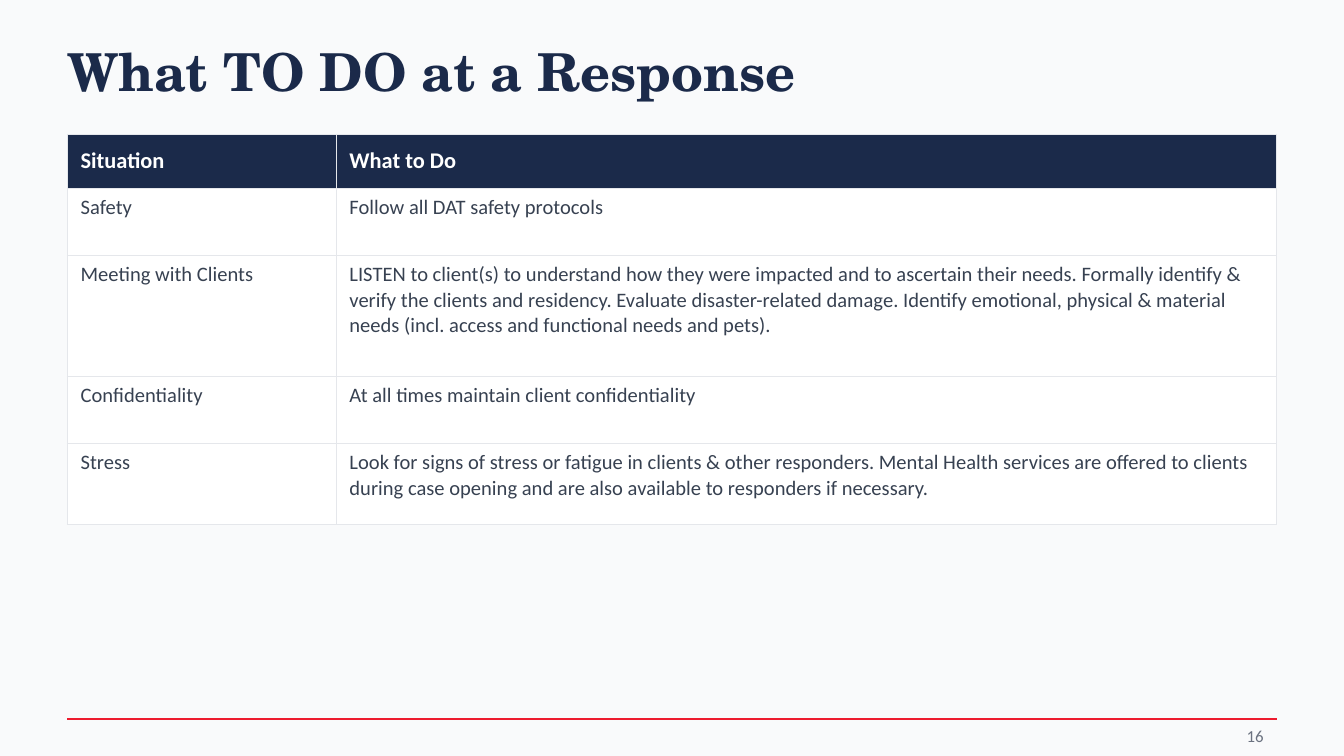
import pptx
import pptx.dml.color
import pptx.enum.shapes
import pptx.enum.text
import pptx.oxml
import pptx.oxml.ns
import pptx.util
from pptx.util import Inches

RGBColor = pptx.dml.color.RGBColor
ALIGN = pptx.enum.text.PP_ALIGN
ANCHOR = pptx.enum.text.MSO_ANCHOR

NAVY = RGBColor(0x1B, 0x2A, 0x4A)
RED = RGBColor(0xED, 0x1B, 0x2E)
PALE = RGBColor(0xF9, 0xFA, 0xFB)
WHITE = RGBColor(0xFF, 0xFF, 0xFF)
SLATE = RGBColor(0x37, 0x41, 0x51)
GRAY = RGBColor(0x6B, 0x72, 0x80)
BORDER = RGBColor(0xE5, 0xE7, 0xEB)

GUIDANCE = [
    ("Situation", "What to Do", 0.4),
    ("Safety", "Follow all DAT safety protocols", 0.5),
    ("Meeting with Clients",
     "LISTEN to client(s) to understand how they were impacted and to ascertain "
     "their needs. Formally identify & verify the clients and residency. Evaluate "
     "disaster-related damage. Identify emotional, physical & material needs "
     "(incl. access and functional needs and pets).", 0.9),
    ("Confidentiality", "At all times maintain client confidentiality", 0.5),
    ("Stress",
     "Look for signs of stress or fatigue in clients & other responders. Mental "
     "Health services are offered to clients during case opening and are also "
     "available to responders if necessary.", 0.6),
]


def write(frame, text, size, color, bold=False, name="Calibri", align=ALIGN.LEFT):
    paragraph = frame.paragraphs[0]
    paragraph.text = text
    paragraph.alignment = align
    font = paragraph.runs[0].font
    formats = {"size": pptx.util.Pt(size), "bold": bold, "name": name}
    for attribute, value in formats.items():
        setattr(font, attribute, value)
    font.color.rgb = color


def add_borders(cell):
    """Insert the four edge lines ahead of the cell fill, as the schema requires."""
    properties = cell._tc.get_or_add_tcPr()
    for position, edge in enumerate(("lnL", "lnR", "lnT", "lnB")):
        properties.insert(position, pptx.oxml.parse_xml(
            f'<a:{edge} {pptx.oxml.ns.nsdecls("a")} w="{pptx.util.Pt(0.5)}">'
            f'<a:solidFill><a:srgbClr val="{BORDER}"/></a:solidFill></a:{edge}>'))


prs = pptx.Presentation()
prs.slide_width = Inches(10)
prs.slide_height = prs.slide_width * 9 // 16
slide = prs.slides.add_slide(prs.slide_layouts[5])
slide.background.fill.solid()
slide.background.fill.fore_color.rgb = PALE

# Title
title = slide.shapes.title
title.left, title.top = Inches(0.5), Inches(0.25)
title.width, title.height = Inches(9), Inches(0.55)
title_format = {
    "margin_left": 0, "margin_right": 0, "margin_top": 0, "margin_bottom": 0,
    "vertical_anchor": ANCHOR.MIDDLE, "word_wrap": True,
    "auto_size": pptx.enum.text.MSO_AUTO_SIZE.NONE,
}
for attribute, value in title_format.items():
    setattr(title.text_frame, attribute, value)
write(title.text_frame, "What TO DO at a Response", 28, NAVY, True, "TeX Gyre Schola")

# Footer rule and page number
rule = slide.shapes.add_connector(
    pptx.enum.shapes.MSO_CONNECTOR.STRAIGHT,
    Inches(0.5), Inches(5.35), Inches(9.5), Inches(5.35))
rule.line.color.rgb = RED
rule.line.width = pptx.util.Pt(1.5)
rule._element.spPr.append(
    pptx.oxml.parse_xml(f'<a:effectLst {pptx.oxml.ns.nsdecls("a")}/>'))

page_number = slide.shapes.add_textbox(
    Inches(9), Inches(5.35), Inches(0.5), Inches(0.25)).text_frame
page_number.word_wrap = True
page_number.vertical_anchor = ANCHOR.MIDDLE
write(page_number, "16", 9, GRAY, align=ALIGN.RIGHT)

# Guidance table
total_height = sum(height for _, _, height in GUIDANCE)
table = slide.shapes.add_table(
    len(GUIDANCE), 2, Inches(0.5), Inches(1), Inches(9), Inches(total_height)).table
table.horz_banding = False
table.columns[0].width = Inches(2)
table.columns[1].width = Inches(7)

for row, (situation, action, height) in enumerate(GUIDANCE):
    table.rows[row].height = Inches(height)
    header = row == 0
    for column, text in enumerate((situation, action)):
        cell = table.cell(row, column)
        cell.fill.solid()
        cell.fill.fore_color.rgb = NAVY if header else WHITE
        cell.vertical_anchor = ANCHOR.MIDDLE if header else ANCHOR.TOP
        write(cell.text_frame, text, 12 if header else 11,
              WHITE if header else SLATE, header)
        add_borders(cell)

prs.save("out.pptx")
